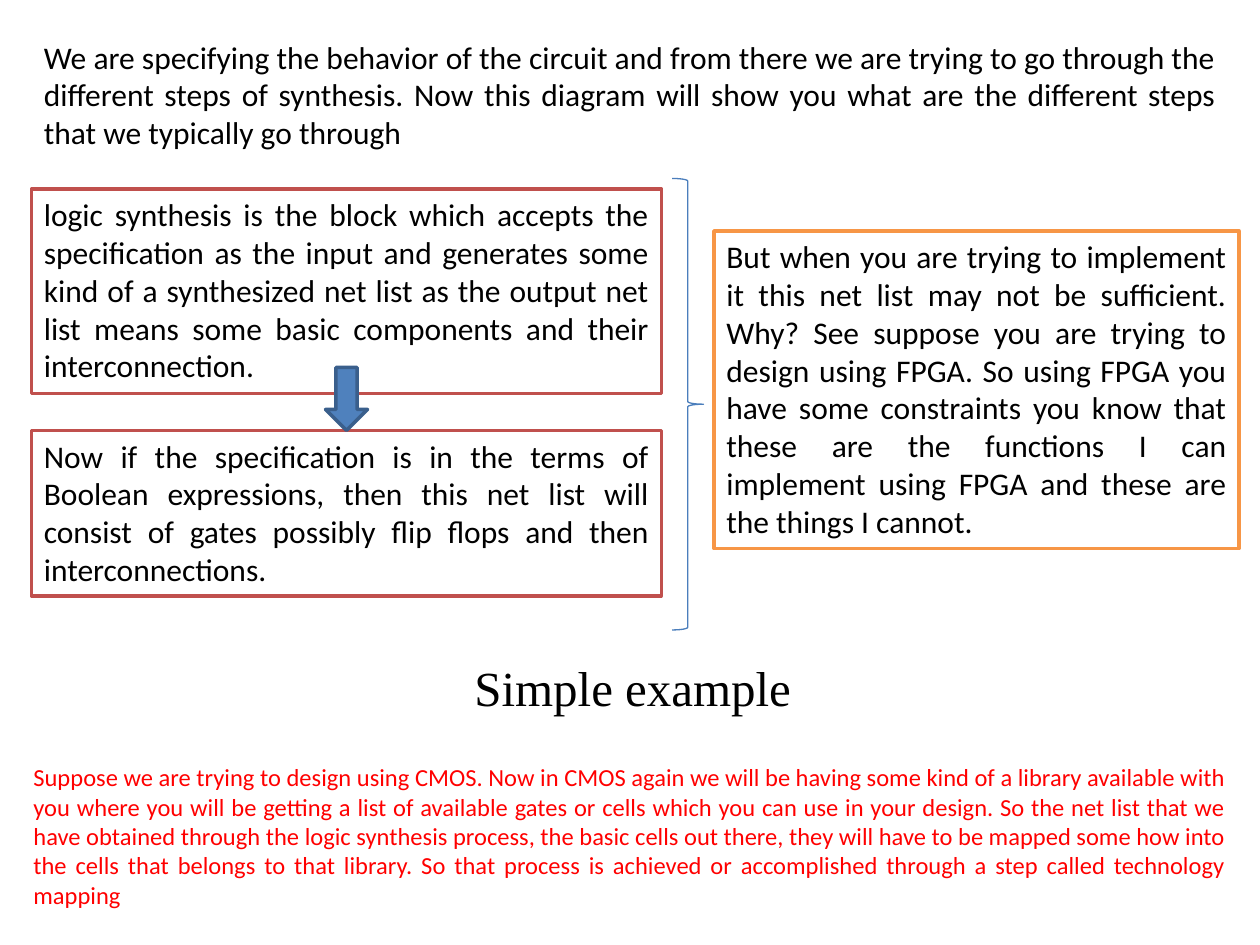
import pptx
import pptx.dml.color
import pptx.enum.shapes
import pptx.enum.text
import pptx.util

PX = 9525  # EMU in one px, 96 px to the inch
FORMS = pptx.enum.shapes.MSO_SHAPE
ALIGN = pptx.enum.text.PP_ALIGN
BODY = {"name": "Calibri", "size": pptx.util.Pt(18)}
NOTE = {"name": "Calibri", "size": pptx.util.Pt(14)}
HEAD = {"name": "Times New Roman", "size": pptx.util.Pt(28)}

INTRO = (
    "We are specifying the behavior of the circuit and from there we are "
    "trying to go through the different steps of synthesis. Now this diagram "
    "will show you what are the different steps that we typically go through"
)
LOGIC = (
    "logic synthesis is the block which accepts the specification as the "
    "input and generates some kind of a synthesized net list as the output "
    "net list means some basic components and their interconnection."
)
GATES = (
    "Now if the specification is in the terms of Boolean expressions, then "
    "this net list will consist of gates possibly flip flops and then "
    "interconnections."
)
LIMITS = (
    "But when you are trying to implement it this net list may not be "
    "sufficient. Why? See suppose you are trying to design using FPGA. So "
    "using FPGA you have some constraints you know that these are the "
    "functions I can implement using FPGA and these are the things I cannot."
)
CMOS = (
    "Suppose we are trying to design using CMOS. Now in CMOS again we will "
    "be having some kind of a library available with you where you will be "
    "getting a list of available gates or cells which you can use in your "
    "design. So the net list that we have obtained through the logic "
    "synthesis process, the basic cells out there, they will have to be "
    "mapped some how into the cells that belongs to that library. So that "
    "process is achieved or accomplished through a step called technology "
    "mapping"
)


def tint(code):
    return pptx.dml.color.RGBColor.from_string(code)


def scale(box):
    return [n * PX for n in box]


def write(shape, text, form, color="000000", align=ALIGN.JUSTIFY, wrap=True):
    frame = shape.text_frame
    frame.word_wrap = wrap
    frame.auto_size = pptx.enum.text.MSO_AUTO_SIZE.SHAPE_TO_FIT_TEXT
    frame.vertical_anchor = pptx.enum.text.MSO_ANCHOR.TOP
    para = frame.paragraphs[0]
    para.alignment = align
    run = para.add_run()
    run.text = text
    for key, value in form.items():
        setattr(run.font, key, value)
    run.font.color.rgb = tint(color)


def label(slide, box, text, form, **style):
    write(slide.shapes.add_textbox(*scale(box)), text, form, **style)


def draw(slide, kind, box, line, fill=None, width=2):
    shape = slide.shapes.add_shape(kind, *scale(box))
    shape.shadow.inherit = False
    if fill:
        shape.fill.solid()
        shape.fill.fore_color.rgb = tint(fill)
    else:
        shape.fill.background()
    shape.line.color.rgb = tint(line)
    shape.line.width = pptx.util.Pt(width)
    return shape


def panel(slide, box, text, line):
    write(draw(slide, FORMS.RECTANGLE, box, line, "FFFFFF"), text, BODY)


def steps(slide, box):
    """Two stacked panels, with a centred arrow ending on the lower one."""
    left, top, wide, high = box
    low, tall, arrow = 126, 48, 32
    base = top + high - low
    panel(slide, (left, top, wide, 156), LOGIC, "C0504D")
    panel(slide, (left, base, wide, low), GATES, "C0504D")
    spot = (left + (wide - arrow) // 2, base - tall, arrow, tall)
    draw(slide, FORMS.DOWN_ARROW, spot, "3A5F8C", "4F81BD")


def limits(slide, box):
    """A brace that leads to the panel on its right."""
    left, top, wide, high = box
    draw(slide, FORMS.RIGHT_BRACE, (left, top, 24, high), "4B7EBC", width=0.75)
    panel(slide, (left + 32, top + 40, wide - 32, 242), LIMITS, "F79646")


def example(slide, box):
    """A heading above a red note."""
    left, top, wide, high = box
    label(slide, (left + 336, top, 263, 55), "Simple example", HEAD,
          align=ALIGN.LEFT, wrap=False)
    label(slide, (left, top + 80, wide, high - 80), CMOS, NOTE, color="FF0000")


def main():
    deck = pptx.Presentation()
    deck.slide_width, deck.slide_height = scale((960, 720))
    slide = deck.slides.add_slide(deck.slide_layouts[6])
    label(slide, (24, 24, 912, 97), INTRO, BODY)
    steps(slide, (24, 144, 480, 310))
    limits(slide, (512, 136, 432, 344))
    example(slide, (16, 496, 928, 203))
    deck.save("out.pptx")


if __name__ == "__main__":
    main()
